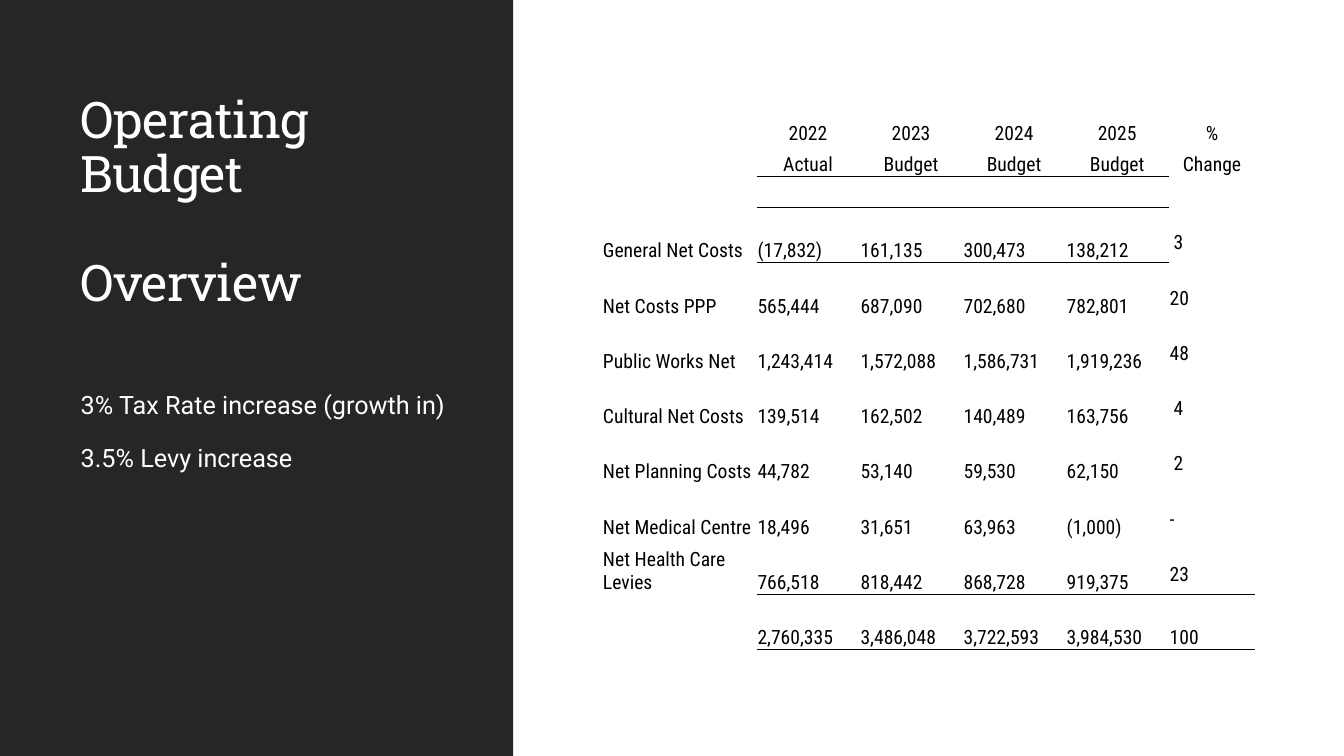
from lxml import etree
from pptx import Presentation
from pptx.dml.color import RGBColor
from pptx.enum.shapes import MSO_SHAPE
from pptx.enum.text import MSO_ANCHOR, MSO_AUTO_SIZE, PP_ALIGN
from pptx.oxml.ns import qn
from pptx.util import Inches, Pt

RECTANGLE = MSO_SHAPE.RECTANGLE
TOP, BOTTOM = MSO_ANCHOR.TOP, MSO_ANCHOR.BOTTOM
LEFT, CENTER = PP_ALIGN.LEFT, PP_ALIGN.CENTER
NO_AUTOFIT = MSO_AUTO_SIZE.NONE
NO_TABLE_STYLE = "{2D5ABB26-0587-4C30-8999-92F81FD0307C}"
COLORS = {"panel": "262626", "light": "FFFFFF", "ink": "000000"}
FONTS = {"title": "Roboto Slab", "body": "Roboto", "table": "Roboto Condensed"}
GRID = 100

HEADER_ROWS = [
    ["", "2022", "2023", "2024", "2025", "%"],
    ["", "Actual", "Budget", "Budget", "Budget", "Change"],
    [""] * 6,
]
COST_ROWS = [
    ["General Net Costs", "(17,832)", "161,135", "300,473", "138,212", "3"],
    ["Net Costs PPP", "565,444", "687,090", "702,680", "782,801", "20"],
    ["Public Works Net", "1,243,414", "1,572,088", "1,586,731", "1,919,236", "48"],
    ["Cultural Net Costs", "139,514", "162,502", "140,489", "163,756", "4"],
    ["Net Planning Costs", "44,782", "53,140", "59,530", "62,150", "2"],
    ["Net Medical Centre", "18,496", "31,651", "63,963", "(1,000)", "-"],
    ["Net Health Care Levies", "766,518", "818,442", "868,728", "919,375", "23"],
]
TOTAL_ROW = ["", "2,760,335", "3,486,048", "3,722,593", "3,984,530", "100"]
RULES_BELOW = [
    (10, [1, 2, 3, 4], 1),
    (10, [5], 0.5),
    (9, [1, 2, 3, 4, 5], 0.5),
    (2, [1, 2, 3, 4], 1),
    (1, [1, 2, 3, 4], 0.5),
]


class BudgetSlide:
    def __init__(self, presentation):
        self.column = presentation.slide_width / GRID
        self.row = presentation.slide_height / GRID
        self.slide = presentation.slides.add_slide(presentation.slide_layouts[1])
        self.shapes = self.slide.shapes

    def box(self, left, top, width, height):
        return (int(left * self.column), int(top * self.row),
                int(width * self.column), int(height * self.row))

    def format_runs(self, paragraph, font, size, color):
        for run in paragraph.runs:
            run.font.name = FONTS[font]
            run.font.size = Pt(size)
            run.font.color.rgb = RGBColor.from_string(COLORS[color])

    def panel(self, *place):
        shape = self.shapes.add_shape(RECTANGLE, *self.box(*place))
        shape.shadow.inherit = False
        shape.fill.solid()
        shape.fill.fore_color.rgb = RGBColor.from_string(COLORS["panel"])
        shape.line.fill.background()
        self.shapes.title._element.addprevious(shape._element)

    def fill_placeholder(self, shape, place, lines, font, size, anchor, line_spacing):
        shape.left, shape.top, shape.width, shape.height = self.box(*place)
        frame = shape.text_frame
        frame.text = "\n".join(lines)
        frame.word_wrap = True
        frame.auto_size = NO_AUTOFIT
        frame.vertical_anchor = anchor
        for paragraph in frame.paragraphs:
            paragraph.alignment = LEFT
            paragraph.line_spacing = line_spacing
            self.format_runs(paragraph, font, size, "light")
        return frame.paragraphs

    def title(self, place, lines):
        paragraphs = self.fill_placeholder(
            self.shapes.title, place, lines, "title", 36, BOTTOM, 0.9)
        paragraphs[-1].space_before = Pt(39)
        for paragraph in paragraphs:
            for run in paragraph.runs:
                run.font._element.set("spc", "-50")

    def body(self, place, lines):
        paragraphs = self.fill_placeholder(
            self.slide.placeholders[1], place, lines, "body", 18, TOP, 1.1)
        for paragraph in paragraphs:
            paragraph.space_before = Pt(12)
            paragraph.space_after = Pt(2)
            properties = paragraph._p.get_or_add_pPr()
            properties.set("marL", "0")
            properties.set("indent", "0")
            etree.SubElement(properties, qn("a:buNone"))

    def cell(self, cell, text, alignment):
        cell.margin_left = cell.margin_right = cell.margin_top = Inches(0.01)
        cell.margin_bottom = 0
        cell.vertical_anchor = BOTTOM
        cell.fill.background()
        cell.text_frame.text = text
        paragraph = cell.text_frame.paragraphs[0]
        paragraph.alignment = alignment
        self.format_runs(paragraph, "table", 14, "ink")
        if not text:
            etree.SubElement(paragraph._p, qn("a:endParaRPr"), sz="1400")

    def rule(self, cell, side, width):
        line = etree.Element(qn(side), w=str(Pt(width)))
        fill = etree.SubElement(line, qn("a:solidFill"))
        etree.SubElement(fill, qn("a:srgbClr"), val=COLORS["ink"])
        cell._tc.get_or_add_tcPr().insert(0, line)

    def table(self, left, top, column_widths, row_heights, rows):
        place = self.box(left, top, sum(column_widths), sum(row_heights))
        table = self.shapes.add_table(len(rows), len(column_widths), *place).table
        table.first_row = table.horz_banding = False
        table._tbl.tblPr.find(qn("a:tableStyleId")).text = NO_TABLE_STYLE
        for column, width in zip(table.columns, column_widths):
            column.width = int(width * self.column)
        for row, height in zip(table.rows, row_heights):
            row.height = int(height * self.row)
        for row_index, texts in enumerate(rows):
            alignment = CENTER if row_index < len(HEADER_ROWS) else LEFT
            for column_index, text in enumerate(texts):
                self.cell(table.cell(row_index, column_index), text, alignment)
        return table

    def raise_changes(self, table):
        first = len(HEADER_ROWS)
        for row_index in range(first, first + len(COST_ROWS)):
            cell = table.cell(row_index, 5)
            cell.vertical_anchor = TOP
            cell.margin_top = Inches(0.24)
            if cell.text_frame.text.isdigit() and len(cell.text_frame.text) == 1:
                cell.margin_left = Inches(0.05)

    def rules(self, table):
        for row_index, columns, width in RULES_BELOW:
            for column_index in columns:
                self.rule(table.cell(row_index, column_index), "a:lnB", width)
                if row_index + 1 < len(table.rows):
                    self.rule(table.cell(row_index + 1, column_index), "a:lnT", width)


def main():
    presentation = Presentation()
    presentation.slide_width = Inches(13.33)
    presentation.slide_height = Inches(7.5)
    slide = BudgetSlide(presentation)
    slide.panel(0, 0, 38.19, GRID)
    slide.title((5.25, 11.47, 28.88, 30.53), ["Operating Budget", "Overview"])
    slide.body((5.25, 50.4, 28.88, 25.73),
               ["3% Tax Rate increase (growth in)", "3.5% Levy increase"])
    rows = HEADER_ROWS + COST_ROWS + [TOTAL_ROW]
    table = slide.table(44.79, 15.07, [11.5] + [7.67] * 4 + [6.45],
                        [4.13] * 3 + [7.31] * 8, rows)
    slide.raise_changes(table)
    slide.rules(table)
    presentation.save("out.pptx")


if __name__ == "__main__":
    main()
